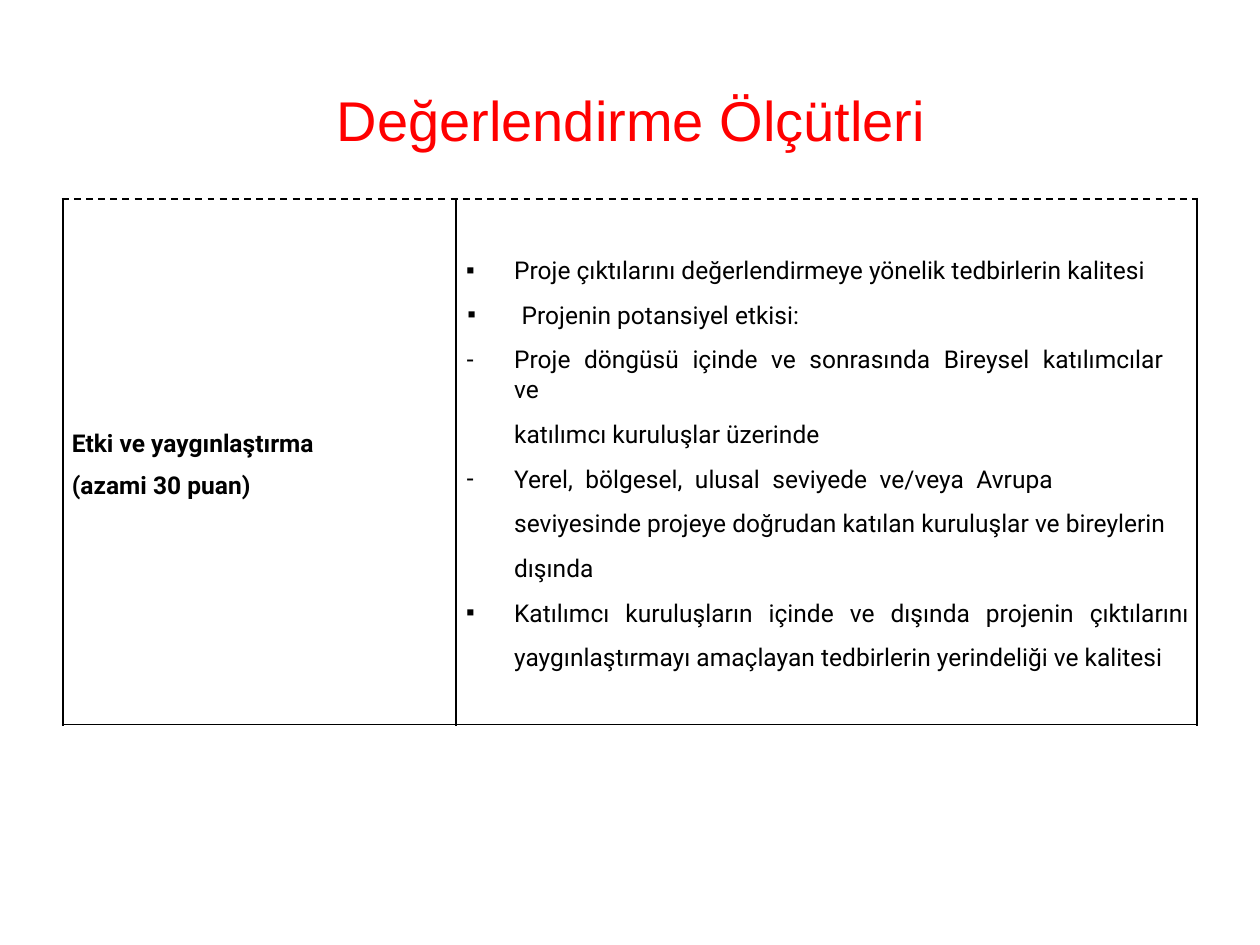
from lxml import etree
from pptx import Presentation
from pptx.dml.color import RGBColor
from pptx.enum.dml import MSO_LINE
from pptx.enum.shapes import MSO_CONNECTOR, MSO_SHAPE
from pptx.enum.text import MSO_ANCHOR, MSO_AUTO_SIZE, PP_ALIGN
from pptx.oxml.ns import qn
from pptx.util import Inches, Pt

TOP, NO_AUTOFIT = MSO_ANCHOR.TOP, MSO_AUTO_SIZE.NONE
LEFT, CENTER, JUSTIFY = PP_ALIGN.LEFT, PP_ALIGN.CENTER, PP_ALIGN.JUSTIFY
STRAIGHT, RECTANGLE = MSO_CONNECTOR.STRAIGHT, MSO_SHAPE.RECTANGLE
SOLID, DASH = MSO_LINE.SOLID, MSO_LINE.DASH

COLORS = {"title": "FF0000", "text": "000000", "cell": "FFFFFF", "border": "000000"}

# Content
TITLE = "Değerlendirme Ölçütleri"
CRITERION = "Etki ve yaygınlaştırma (azami 30 puan)"
ITEM = {"indent": 0.39, "hanging": 0.38, "before": 8.4, "line": 1.02}
WIDE = {"indent": 0.39, "hanging": 0.38, "line": 1.52}
MEASURES = [
    ("Proje çıktılarını değerlendirmeye yönelik tedbirlerin kalitesi",
     {**ITEM, "bullet": "▪", "before": 0}),
    ("Projenin potansiyel etkisi:",
     {**ITEM, "bullet": "▪", "indent": 0.45, "hanging": 0.43}),
    ("Proje döngüsü içinde ve sonrasında Bireysel katılımcılar\vve",
     {**ITEM, "bullet": "-", "gap": 4.2}),
    ("katılımcı kuruluşlar üzerinde", {**ITEM, "hanging": 0}),
    ("Yerel, bölgesel, ulusal seviyede ve/veya Avrupa\vseviyesinde projeye doğrudan "
     "katılan kuruluşlar ve bireylerin dışında", {**WIDE, "bullet": "-", "gap": 3.6}),
    ("Katılımcı kuruluşların içinde ve dışında projenin çıktılarını yaygınlaştırmayı "
     "amaçlayan tedbirlerin yerindeliği ve kalitesi",
     {**WIDE, "bullet": "▪", "align": JUSTIFY}),
]

# Grid of the two columns, in inches
GRID_LEFT, GRID_SPLIT, GRID_RIGHT = 0.5, 3.62, 9.5
GRID_TOP, GRID_BOTTOM = 1.58, 5.75
OVERHANG = 0.01


def add_words(paragraph, text, gap):
    """Add text; gap widens the spaces of its first line by that many points."""
    first, line_break, rest = text.partition("\v")
    for index, word in enumerate(first.split(" ") if gap else [first]):
        if index:
            space = paragraph.add_run()
            space.text = " "
            space._r.get_or_add_rPr().set("spc", str(round(gap * 100)))
        paragraph.add_run().text = word
    if line_break:
        paragraph.add_line_break()
        paragraph.add_run().text = rest


def write(paragraph, text, size=14, font="Roboto", color="text", bold=False,
          align=LEFT, indent=0, hanging=0, before=0, line=1.0, bullet=None, gap=0):
    """Fill one paragraph and format it."""
    add_words(paragraph, text, gap)
    paragraph.alignment = align
    paragraph.line_spacing = line
    paragraph.space_before = Pt(before)
    properties = paragraph._p.get_or_add_pPr()
    properties.set("marL", str(Inches(indent)))
    properties.set("indent", str(-Inches(hanging)))
    if bullet:
        etree.SubElement(properties, qn("a:buChar")).set("char", bullet)
    else:
        etree.SubElement(properties, qn("a:buNone"))
    for style in [paragraph.font] + [run.font for run in paragraph.runs]:
        style.size, style.name, style.bold = Pt(size), font, bold
        style.color.rgb = RGBColor.from_string(COLORS[color])


def place(holder, left, top, width, height):
    """Position a text holder and return its frame without margins."""
    holder.left, holder.top = Inches(left), Inches(top)
    holder.width, holder.height = Inches(width), Inches(height)
    frame = holder.text_frame
    frame.margin_left = frame.margin_top = frame.margin_right = frame.margin_bottom = 0
    frame.vertical_anchor, frame.auto_size, frame.word_wrap = TOP, NO_AUTOFIT, True
    return frame


def set_base_size(frame, size):
    """Set the size that the bullets of a list follow."""
    list_style = frame._txBody.find(qn("a:lstStyle"))
    level = etree.SubElement(list_style, qn("a:lvl1pPr"))
    etree.SubElement(level, qn("a:defRPr")).set("sz", str(size * 100))


def add_border(slide, x1, y1, x2, y2, dash=SOLID):
    border = slide.shapes.add_connector(
        STRAIGHT, Inches(x1), Inches(y1), Inches(x2), Inches(y2))
    border.line.width = Pt(1)
    border.line.color.rgb = RGBColor.from_string(COLORS["border"])
    border.line.dash_style = dash
    etree.SubElement(border._element.spPr, qn("a:effectLst"))


def main():
    prs = Presentation()
    prs.slide_width, prs.slide_height = Inches(10), Inches(7.5)
    slide = prs.slides.add_slide(prs.slide_layouts[1])
    title, measures = slide.placeholders

    # Title
    frame = place(title, 0.61, 0.68, 8.8, 0.58)
    write(frame.paragraphs[0], TITLE, size=32, font="Arial", color="title", align=CENTER)

    # Measures
    frame = place(measures, 3.69, 2.02, 5.75, 3.4)
    set_base_size(frame, 14)
    for index, (text, layout) in enumerate(MEASURES):
        paragraph = frame.add_paragraph() if index else frame.paragraphs[0]
        write(paragraph, text, **layout)

    # Background of the measures, behind all text
    panel = slide.shapes.add_shape(
        RECTANGLE, Inches(GRID_SPLIT), Inches(GRID_TOP),
        Inches(GRID_RIGHT - GRID_SPLIT), Inches(GRID_BOTTOM - GRID_TOP))
    panel.shadow.inherit = False
    panel.fill.solid()
    panel.fill.fore_color.rgb = RGBColor.from_string(COLORS["cell"])
    panel.line.fill.background()
    title._element.addprevious(panel._element)

    # Grid borders
    for x in (GRID_SPLIT, GRID_LEFT, GRID_RIGHT):
        add_border(slide, x, GRID_TOP - OVERHANG, x, GRID_BOTTOM + OVERHANG)
    for y, dash in ((GRID_TOP, DASH), (GRID_BOTTOM, SOLID)):
        add_border(slide, GRID_LEFT - OVERHANG, y, GRID_RIGHT + OVERHANG, y, dash)

    # Criterion and its maximum score
    criterion = slide.shapes.add_textbox(0, 0, 0, 0)
    frame = place(criterion, 0.57, 3.3, 2.2, 0.56)
    write(frame.paragraphs[0], CRITERION, bold=True, line=1.43)

    prs.save("out.pptx")


if __name__ == "__main__":
    main()
